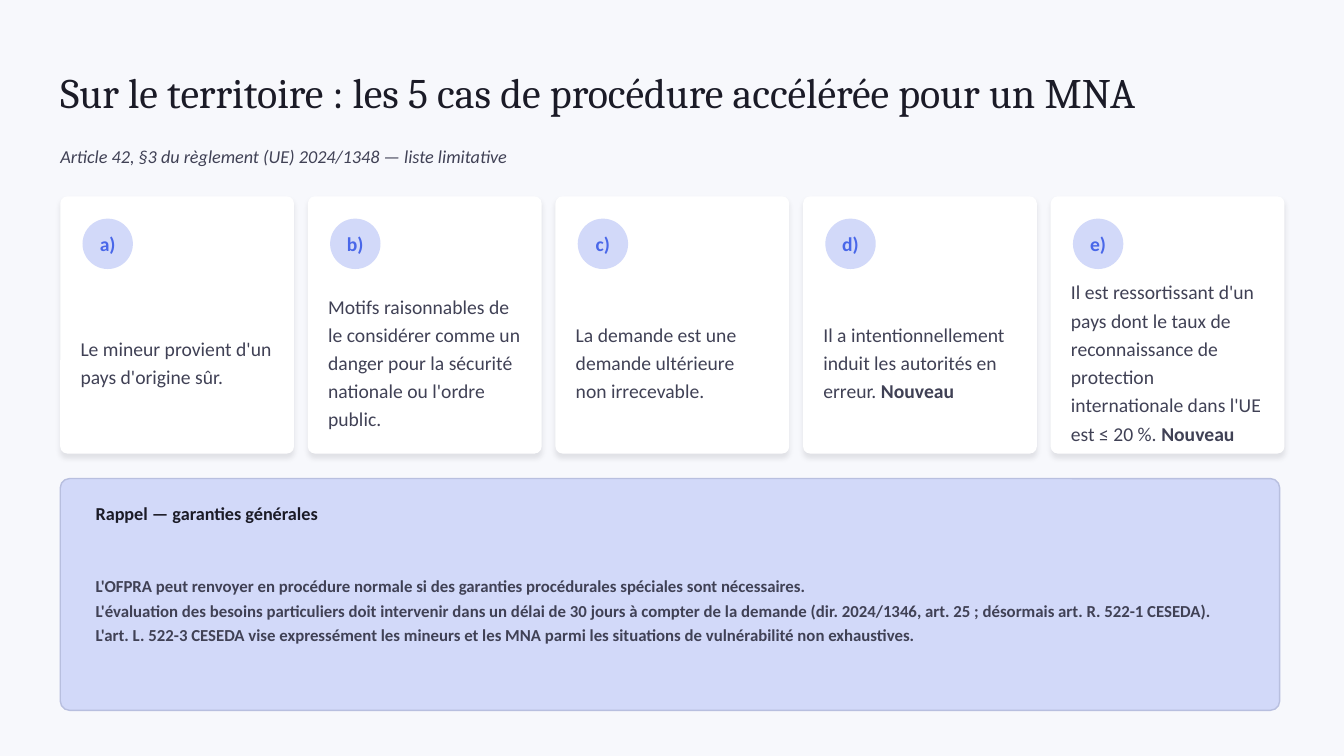
from lxml.etree import SubElement
from pptx import Presentation
from pptx.dml.color import RGBColor
from pptx.enum.shapes import MSO_SHAPE
from pptx.enum.text import MSO_ANCHOR, MSO_AUTO_SIZE, PP_ALIGN
from pptx.oxml.ns import qn
from pptx.util import Cm, Pt

BACKGROUND = RGBColor(0xF7, 0xF8, 0xFC)
INK = RGBColor(0x1B, 0x1B, 0x27)
TEXT = RGBColor(0x40, 0x41, 0x55)
ACCENT = RGBColor(0x49, 0x67, 0xE9)
LAVENDER = RGBColor(0xD2, 0xD9, 0xF9)
BORDER = RGBColor(0xB8, 0xBF, 0xDF)
WHITE = RGBColor(0xFF, 0xFF, 0xFF)

LEFT = 1.52
CARD_TOP, CARD_WIDTH, CARD_HEIGHT, CARD_PITCH = 4.95, 5.89, 6.48, 6.24

CASES = [
    ("a)", ["Le mineur provient d'un pays d'origine sûr."]),
    ("b)", ["Motifs raisonnables de le considérer comme un danger pour la "
            "sécurité nationale ou l'ordre public."]),
    ("c)", ["La demande est une demande ultérieure non irrecevable."]),
    ("d)", ["Il a intentionnellement induit les autorités en erreur. ", "Nouveau"]),
    ("e)", ["Il est ressortissant d'un pays dont le taux de reconnaissance de "
            "protection internationale dans l'UE est ≤ 20 %. ", "Nouveau"]),
]

GUARANTEES = [
    ["L'OFPRA peut renvoyer en procédure normale si des garanties procédurales "
     "spéciales sont nécessaires."],
    ["L'évaluation des besoins particuliers doit intervenir dans un délai de "
     "30 jours à compter de la demande (dir. 2024/1346, art. 25 ; désormais "
     "art. R. 522-1 CESEDA). L'art. L. 522-3 CESEDA vise expressément les mineurs "
     "et les MNA parmi les situations de vulnérabilité non exhaustives."],
]


class SlideBuilder:
    heading_font = "Cambria"
    body_font = "Calibri"

    def __init__(self, slide):
        self.slide = slide
        self.slide.background.fill.solid()
        self.slide.background.fill.fore_color.rgb = BACKGROUND

    def set_text(self, shape, paragraphs, size, color, font=body_font, bold=None,
                 italic=None, align=PP_ALIGN.LEFT, spacing=1.0):
        frame = shape.text_frame
        frame.word_wrap = True
        frame.auto_size = MSO_AUTO_SIZE.NONE
        frame.vertical_anchor = MSO_ANCHOR.MIDDLE
        frame.margin_left = frame.margin_right = 0
        frame.margin_top = frame.margin_bottom = 0
        for index, runs in enumerate(paragraphs):
            paragraph = frame.add_paragraph() if index else frame.paragraphs[0]
            if shape.is_placeholder:
                properties = paragraph._p.get_or_add_pPr()
                properties.set("marL", "0")
                properties.set("indent", "0")
                SubElement(properties, qn("a:buNone"))
            paragraph.alignment = align
            paragraph.line_spacing = spacing
            paragraph.space_before = Pt(0)
            paragraph.font.name = font
            paragraph.font.size = Pt(size)
            paragraph.font.color.rgb = color
            paragraph.font.bold = bold
            paragraph.font.italic = italic
            for position, text in enumerate(runs):
                run = paragraph.add_run()
                run.text = text
                if position:
                    run.font.bold = True

    def text(self, box, paragraphs, size, color, **style):
        shape = self.slide.shapes.add_textbox(*map(Cm, box))
        self.set_text(shape, paragraphs, size, color, **style)

    def placeholder(self, shape, box, paragraphs, size, color, **style):
        shape.left, shape.top, shape.width, shape.height = map(Cm, box)
        self.slide.shapes._spTree.append(shape._element)
        self.set_text(shape, paragraphs, size, color, **style)

    def shape(self, kind, box, fill, line=None, corner=None):
        shape = self.slide.shapes.add_shape(kind, *map(Cm, box))
        shape.shadow.inherit = False
        shape.fill.solid()
        shape.fill.fore_color.rgb = fill
        if line is None:
            shape.line.fill.background()
        else:
            shape.line.color.rgb = line
            shape.line.width = Pt(1)
        if corner is not None:
            shape.adjustments[0] = corner
        return shape

    def soft_shadow(self, shape):
        effects = shape._element.spPr.find(qn("a:effectLst"))
        shadow = SubElement(effects, qn("a:outerShdw"), blurRad=str(Pt(4)),
                            dist=str(Pt(3)), dir="5400000", algn="t",
                            rotWithShape="0")
        color = SubElement(shadow, qn("a:srgbClr"), val=str(INK))
        SubElement(color, qn("a:alpha"), val="10000")

    def card(self, left, letter, runs):
        card = self.shape(MSO_SHAPE.ROUNDED_RECTANGLE,
                          (left, CARD_TOP, CARD_WIDTH, CARD_HEIGHT), WHITE, corner=0.03)
        self.soft_shadow(card)
        badge = self.shape(MSO_SHAPE.OVAL,
                           (left + 0.56, CARD_TOP + 0.56, 1.27, 1.27), LAVENDER)
        self.set_text(badge, [[letter]], 14, ACCENT, bold=True, align=PP_ALIGN.CENTER)
        self.text((left + 0.51, CARD_TOP + 2.16, 4.88, 3.94), [runs], 14, TEXT,
                  spacing=1.2)


def main():
    presentation = Presentation()
    presentation.slide_width = Cm(33.87)
    presentation.slide_height = Cm(19.05)
    slide = presentation.slides.add_slide(presentation.slide_layouts[1])
    builder = SlideBuilder(slide)

    builder.placeholder(slide.shapes.title, (LEFT, 1.14, 30.8, 2.29),
                        [["Sur le territoire : les 5 cas de procédure accélérée pour un MNA"]],
                        30, INK, font=builder.heading_font, spacing=1.04)
    builder.text((LEFT, 3.43, 30.73, 1.02),
                 [["Article 42, §3 du règlement (UE) 2024/1348 — liste limitative"]],
                 13, TEXT, italic=True)

    for index, (letter, runs) in enumerate(CASES):
        builder.card(LEFT + index * CARD_PITCH, letter, runs)

    builder.shape(MSO_SHAPE.ROUNDED_RECTANGLE, (LEFT, 12.06, 30.73, 5.84), LAVENDER,
                  line=BORDER, corner=0.04)
    builder.text((2.41, 12.5, 28.96, 0.89), [["Rappel — garanties générales"]],
                 13, INK, bold=True)
    builder.placeholder(slide.placeholders[1], (2.41, 13.41, 28.96, 3.84), GUARANTEES,
                        12, TEXT, bold=True, spacing=1.22)

    presentation.save("out.pptx")


if __name__ == "__main__":
    main()
